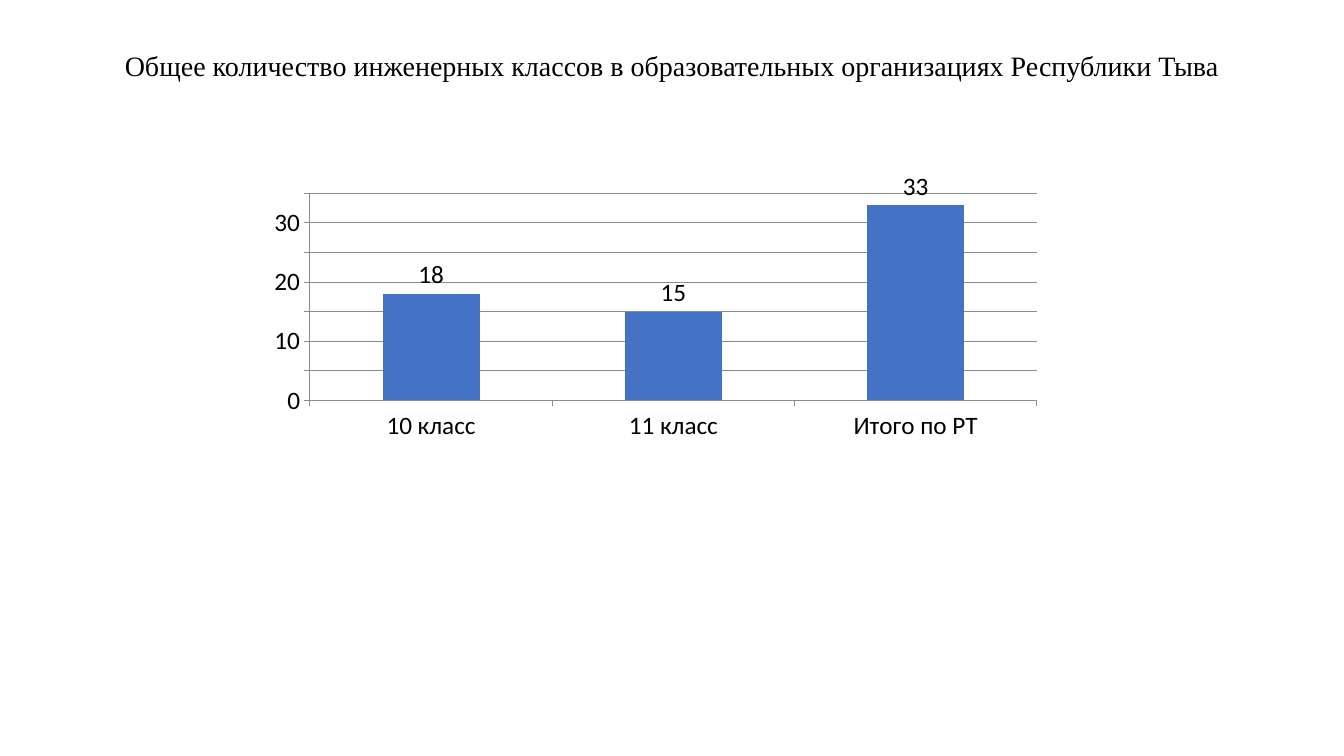
from lxml import etree
from pptx import Presentation
from pptx.chart.data import CategoryChartData
from pptx.dml.color import RGBColor
from pptx.enum.chart import XL_CHART_TYPE, XL_LABEL_POSITION, XL_TICK_MARK
from pptx.enum.text import PP_ALIGN
from pptx.oxml.ns import qn
from pptx.util import Pt

COLUMN = XL_CHART_TYPE.COLUMN_CLUSTERED
ABOVE = XL_LABEL_POSITION.OUTSIDE_END
OUT = XL_TICK_MARK.OUTSIDE
NONE = XL_TICK_MARK.NONE
CENTER = PP_ALIGN.CENTER

BLACK, BLUE, GRAY = "000000", "4472C4", "8B8B8B"
CLASSES = {"10 класс": 18, "11 класс": 15, "Итого по РТ": 33}
FRAME = (259, 171, 793, 271)
PLOT = (310, 192, 727, 208)


def px(n):
    return round(n * 914400 / 100.8)


def color(text):
    return RGBColor.from_string(text)


deck = Presentation()
deck.slide_width, deck.slide_height = px(1344), px(756)
slide = deck.slides.add_slide(deck.slide_layouts[6])

# Title
title = slide.shapes.add_textbox(*map(px, (58, 44, 1228, 44))).text_frame
title.word_wrap = True
line = title.paragraphs[0]
line.text = "Общее количество инженерных классов в образовательных организациях Республики Тыва"
line.alignment = CENTER
line.font.name, line.font.size = "Times New Roman", Pt(20)
line.font.color.rgb = color(BLACK)

# Chart
data = CategoryChartData()
data.categories = list(CLASSES)
data.add_series("Series 1", list(CLASSES.values()))
chart = slide.shapes.add_chart(COLUMN, *map(px, FRAME), data).chart
chart.has_legend = chart.has_title = False
chart.font.name, chart.font.size = "Calibri", Pt(18)
chart.font.color.rgb = color(BLACK)

plot = chart.plots[0]
plot.gap_width = 150
plot.vary_by_categories = False
bars = plot.series[0]
bars.format.fill.solid()
bars.format.fill.fore_color.rgb = color(BLUE)
labels = bars.data_labels
labels.show_value = True
labels.position = ABOVE

# Axes
scale = chart.value_axis
for name, value in {"minimum_scale": 0, "maximum_scale": 35, "major_unit": 5,
                    "has_major_gridlines": True}.items():
    setattr(scale, name, value)
for axis in (chart.category_axis, scale):
    axis.major_tick_mark, axis.minor_tick_mark = OUT, NONE
for part in (chart.category_axis, scale, scale.major_gridlines):
    part.format.line.color.rgb = color(GRAY)
    part.format.line.width = Pt(0.75)

# Fixed inner plot area, as fractions of the chart frame
left, top, wide, high = FRAME
spot = {
    "layoutTarget": "inner", "xMode": "edge", "yMode": "edge",
    "x": (PLOT[0] - left) / wide, "y": (PLOT[1] - top) / high,
    "w": PLOT[2] / wide, "h": PLOT[3] / high,
}
area = chart._chartSpace.find(".//" + qn("c:plotArea"))
for old in area.findall(qn("c:layout")):
    area.remove(old)
layout = etree.Element(qn("c:layout"))
manual = etree.SubElement(layout, qn("c:manualLayout"))
for name, value in spot.items():
    etree.SubElement(manual, qn("c:" + name)).set("val", str(value))
area.insert(0, layout)

deck.save("out.pptx")
